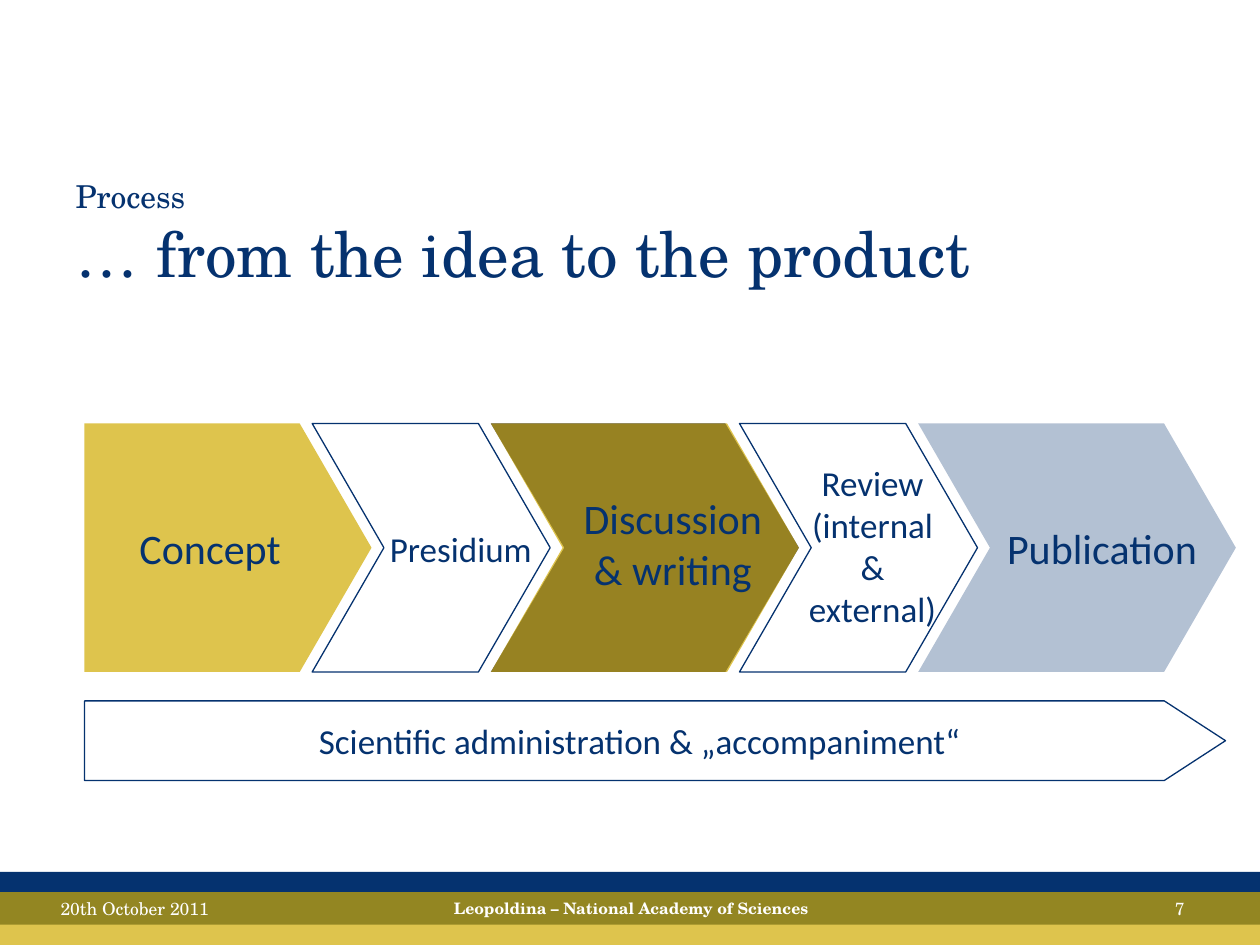
import pptx
import pptx.util
import pptx.dml.color
import pptx.enum.shapes
import pptx.enum.text
import lxml.etree
from collections import namedtuple
from dataclasses import dataclass

Pt = pptx.util.Pt
Shape = pptx.enum.shapes.MSO_SHAPE
Align = pptx.enum.text.PP_ALIGN
Anchor = pptx.enum.text.MSO_ANCHOR
Box = namedtuple("Box", "left top width height")
Step = namedtuple("Step", "text size width fills label")


@dataclass(frozen=True)
class Theme:
    navy: str = "05326F"
    gold: str = "D0AB02"
    deep: str = "132470"
    white: str = "FFFFFF"
    sans: str = "Calibri"
    serif: str = "TeX Gyre Schola"
    title: int = 36
    kicker: int = 18
    large: int = 24
    medium: int = 20
    small: int = 10
    tiny: int = 9


THEME = Theme()
GOLD = (THEME.gold, 70)
TIP = 41  # depth of every arrow point
GAP = 7.1

# Label boxes are relative to the left top corner of their step.
STEPS = [
    Step("Concept", THEME.large, 164, [GOLD], None),
    Step("Presidium", THEME.medium, 136, [None], Box(34, 56, 102, 32)),
    Step("Discussion & writing", THEME.large, 176,
         [(THEME.deep, 100), GOLD], Box(37.5, 36, 133, 66)),
    Step("Review (internal & external)", THEME.medium, 136,
         [None], Box(26.5, 18, 99, 104)),
    Step("Publication", THEME.large, 181.5, [(THEME.navy, 30)],
         Box(28.5, 53, 153, 36)),
]


def rgb(code):
    return pptx.dml.color.RGBColor.from_string(code)


def write(para, text, size, face, color, bold=False):
    run = para.add_run()
    run.text = text
    font = run.font
    font.size, font.name, font.bold = Pt(size), face, bold
    font.color.rgb = rgb(color)


def draw(slide, kind, box, paint, tip=None):
    """Add a shape; paint is (colour, opacity), or None for an outline."""
    shape = slide.shapes.add_shape(kind, *map(Pt, box))
    shape.shadow.inherit = False
    if tip:
        shape.adjustments[0] = tip / min(box.width, box.height)
    if paint is None:
        shape.fill.background()
        shape.line.color.rgb = rgb(THEME.navy)
        shape.line.width = Pt(0.75)
        return shape
    color, share = paint
    shape.fill.solid()
    shape.fill.fore_color.rgb = rgb(color)
    shape.line.fill.background()
    if share < 100:
        tag = pptx.oxml.ns.qn
        node = shape.element.spPr.find(tag("a:solidFill")).find(tag("a:srgbClr"))
        lxml.etree.SubElement(node, tag("a:alpha"), val=str(share * 1000))
    return shape


def inscribe(shape, text, size):
    frame = shape.text_frame
    frame.word_wrap = False
    frame.vertical_anchor = Anchor.MIDDLE
    para = frame.paragraphs[0]
    para.alignment = Align.CENTER
    write(para, text, size, THEME.sans, THEME.navy)


def label(slide, box, text, size, face, color, align=Align.CENTER, bold=False):
    frame = slide.shapes.add_textbox(*map(Pt, box)).text_frame
    frame.word_wrap = True
    para = frame.paragraphs[0]
    para.alignment = align
    write(para, text, size, face, color, bold)


def heading(slide, box):
    title = slide.shapes.title
    title.left, title.top, title.width, title.height = map(Pt, box)
    frame = title.text_frame
    frame.vertical_anchor = Anchor.MIDDLE
    para = frame.paragraphs[0]
    para.alignment = Align.LEFT
    write(para, "Process", THEME.kicker, THEME.serif, THEME.navy)
    para.add_line_break()
    write(para, "… from the idea to the product", THEME.title,
          THEME.serif, THEME.navy)


def process(slide, box):
    """Interlocking steps from left to right."""
    left = box.left
    for step in STEPS:
        area = Box(left, box.top, step.width, box.height)
        kind = Shape.CHEVRON if step.label else Shape.PENTAGON
        for layer, paint in enumerate(step.fills):
            # A lower layer reaches one point deeper and shows as an edge.
            tip = TIP + len(step.fills) - 1 - layer
            shape = draw(slide, kind, area, paint, tip)
        if step.label:
            spot = Box(left + step.label.left, box.top + step.label.top,
                       step.label.width, step.label.height)
            label(slide, spot, step.text, step.size, THEME.sans, THEME.navy)
        else:
            inscribe(shape, step.text, step.size)
        left += step.width - TIP + GAP


def support(slide, box):
    arrow = draw(slide, Shape.PENTAGON, box, None, 35)
    inscribe(arrow, "Scientific administration & „accompaniment“", THEME.medium)


def footer(slide, box):
    band, shift = 30.2, 11.6
    for drop, paint in ((0, (THEME.navy, 100)), (shift, GOLD)):
        draw(slide, Shape.RECTANGLE,
             Box(box.left, box.top + drop, box.width, band), paint)
    top = box.top + shift
    for left, width, text, size, align, bold in (
            (27.5, 168, "20th October 2011", THEME.small, Align.LEFT, False),
            (195, 331, "Leopoldina – National Academy of Sciences",
             THEME.tiny, Align.CENTER, True),
            (516, 168, "7", THEME.small, Align.RIGHT, False)):
        label(slide, Box(box.left + left, top, width, 18), text, size,
              THEME.serif, THEME.white, align, bold)


def main():
    deck = pptx.Presentation()
    deck.slide_width, deck.slide_height = Pt(720), Pt(540)
    slide = deck.slides.add_slide(deck.slide_layouts.get_by_name("Title Only"))
    footer(slide, Box(0, 498.2, 720, 41.8))
    heading(slide, Box(36, 88.5, 648, 90))
    process(slide, Box(48.3, 242, 658, 142))
    support(slide, Box(48.3, 400.5, 652, 45.5))
    deck.save("out.pptx")


if __name__ == "__main__":
    main()
